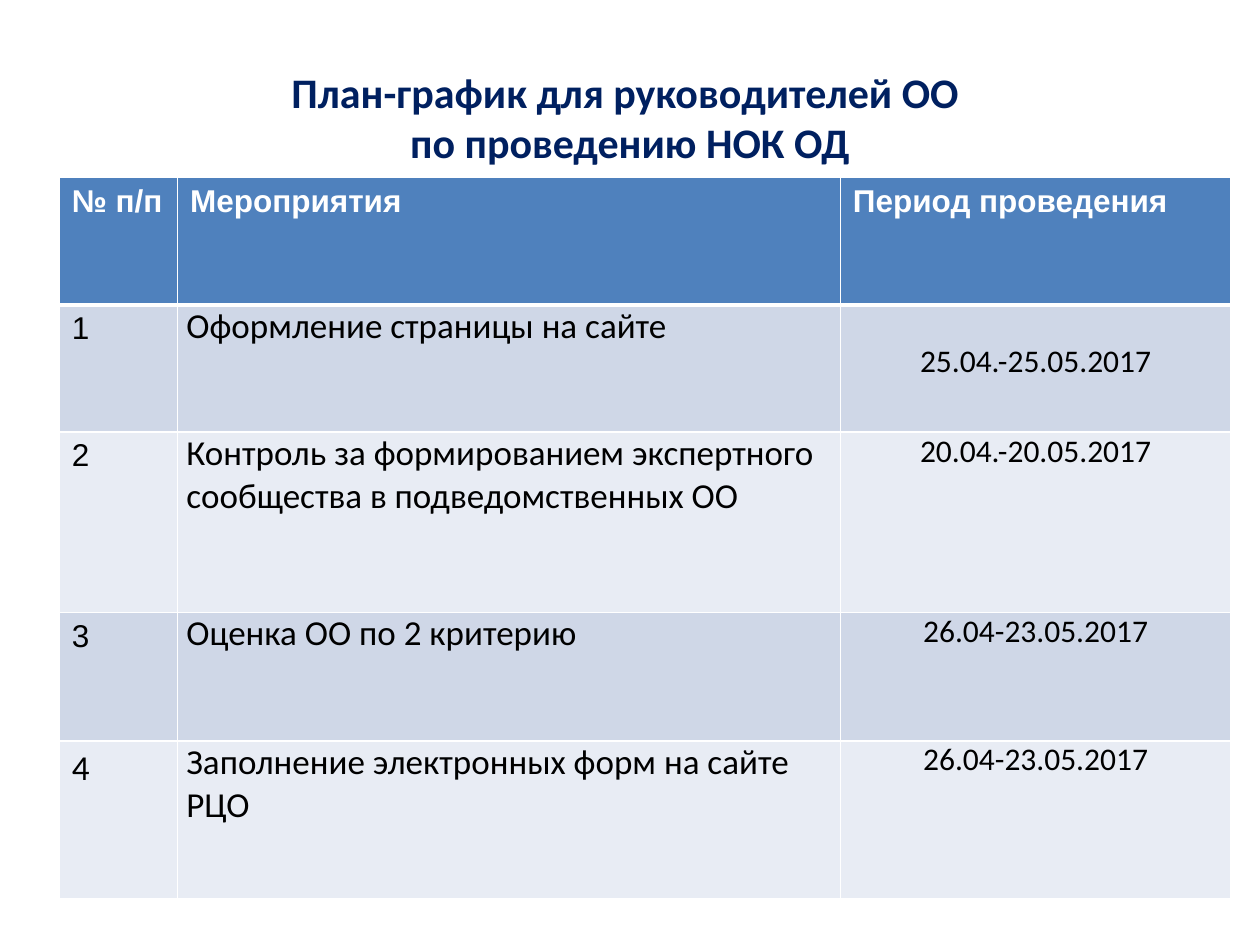
from pptx import Presentation
from pptx.dml.color import RGBColor
from pptx.enum.text import MSO_ANCHOR, PP_ALIGN
from pptx.oxml import parse_xml
from pptx.oxml.ns import nsdecls
from pptx.util import Inches, Pt

COLORS = {
    "title": "002060",
    "header": "4F81BD",
    "odd": "CFD7E7",
    "even": "E8ECF4",
    "white": "FFFFFF",
    "black": "000000",
}
COLUMNS = [0.94, 5.26, 3.1]
ROWS = [1.01, 1.01, 1.43, 1.02, 1.25]
HEADER = ["№ п/п", "Мероприятия", "Период проведения"]
PLAN = [
    ("Оформление страницы на сайте", "25.04.-25.05.2017"),
    ("Контроль за формированием экспертного сообщества в подведомственных ОО",
     "20.04.-20.05.2017"),
    ("Оценка ОО по 2 критерию", "26.04-23.05.2017"),
    ("Заполнение электронных форм на сайте РЦО", "26.04-23.05.2017"),
]


def write(tf, text, size, font, color, bold=False, align=PP_ALIGN.LEFT):
    p = tf.paragraphs[0]
    p.text = text
    p.alignment = align
    for r in p.runs:
        for name, value in {"size": Pt(size), "name": font, "bold": bold}.items():
            setattr(r.font, name, value)
        r.font.color.rgb = RGBColor.from_string(COLORS[color])


def format_cell(cell, fill, margins, widths):
    """Set borders (points: left, right, top, bottom), fill and margins (inches)."""
    for side, width in zip("LRTB", widths):
        cell._tc.get_or_add_tcPr().append(parse_xml(
            f'<a:ln{side} {nsdecls("a")} w="{Pt(width)}"><a:solidFill>'
            f'<a:srgbClr val="{COLORS["white"]}"/></a:solidFill></a:ln{side}>'))
    cell.fill.solid()
    cell.fill.fore_color.rgb = RGBColor.from_string(COLORS[fill])
    for side, margin in zip(("left", "right", "top", "bottom"), margins):
        setattr(cell, f"margin_{side}", Inches(margin))


prs = Presentation()
prs.slide_width, prs.slide_height = Inches(10), Inches(7.5)
s = prs.slides.add_slide(prs.slide_layouts[6])

# Title
tf = s.shapes.add_textbox(Inches(0.5), Inches(0.3), Inches(9), Inches(1.25)).text_frame
tf.word_wrap = True
tf.vertical_anchor = MSO_ANCHOR.MIDDLE
write(tf, "План-график для руководителей ОО \vпо проведению НОК ОД",
      24, "Calibri", "title", True, PP_ALIGN.CENTER)

# Schedule table
table = s.shapes.add_table(len(ROWS), len(COLUMNS), Inches(0.47), Inches(1.41),
                           Inches(sum(COLUMNS)), Inches(sum(ROWS))).table
for column, width in zip(table.columns, COLUMNS):
    column.width = Inches(width)
for row, height in zip(table.rows, ROWS):
    row.height = Inches(height)

wide, narrow = (0.1, 0.1, 0.05, 0.05), (0.07, 0.07, 0, 0)
for cell, text in zip(table.rows[0].cells, HEADER):
    format_cell(cell, "header", wide, (1, 1, 1, 3))
    write(cell.text_frame, text, 18, "Arial", "white", True)

for i, (event, period) in enumerate(PLAN, 1):
    fill = "odd" if i % 2 else "even"
    number, activity, dates = table.rows[i].cells
    # The first period sits one line lower than the others
    dates_margins = (0.07, 0.07, 0.3, 0) if i == 1 else narrow
    for cell, margins in ((number, wide), (activity, narrow), (dates, dates_margins)):
        format_cell(cell, fill, margins, (1, 1, 3 if i == 1 else 1, 1))
    last = i == len(PLAN)
    write(number.text_frame, str(i), 20 if last else 18,
          "Calibri" if last else "Arial", "black")
    write(activity.text_frame, event, 20, "Calibri", "black")
    write(dates.text_frame, period, 18, "Calibri", "black", align=PP_ALIGN.CENTER)

prs.save("out.pptx")
